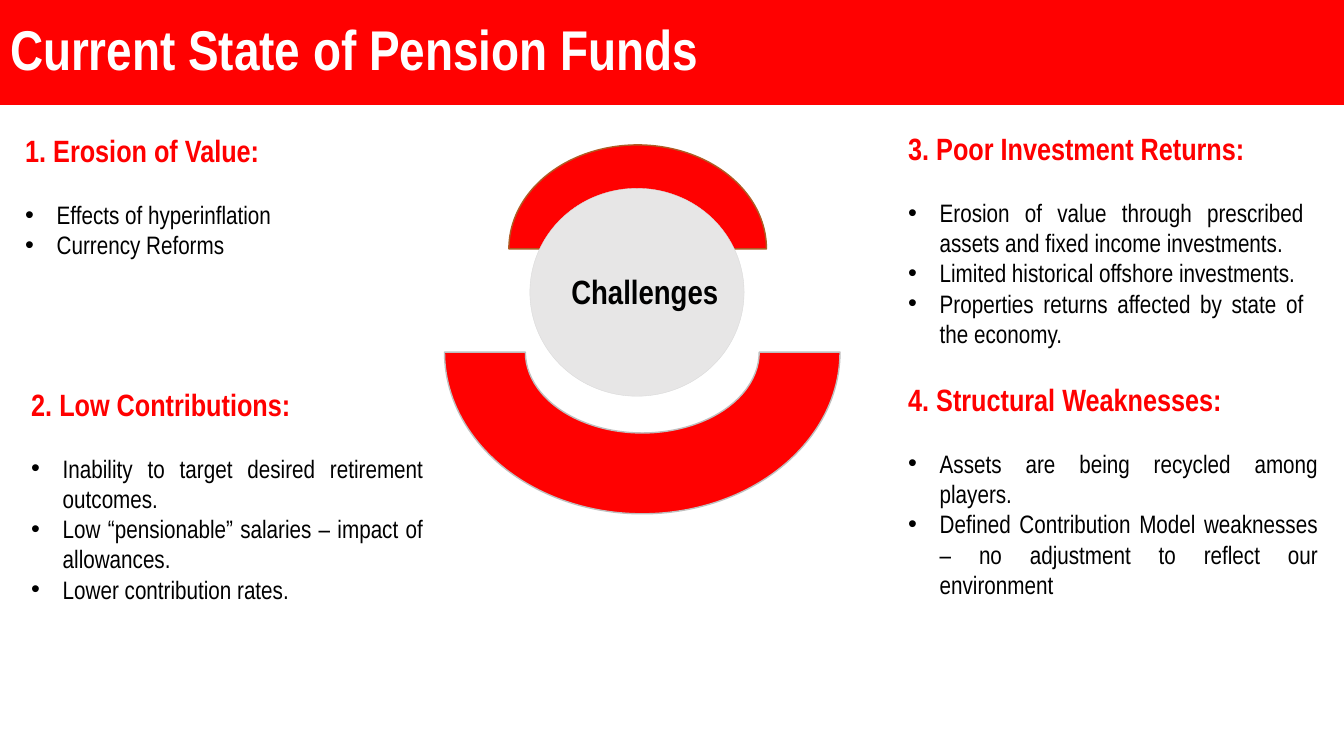
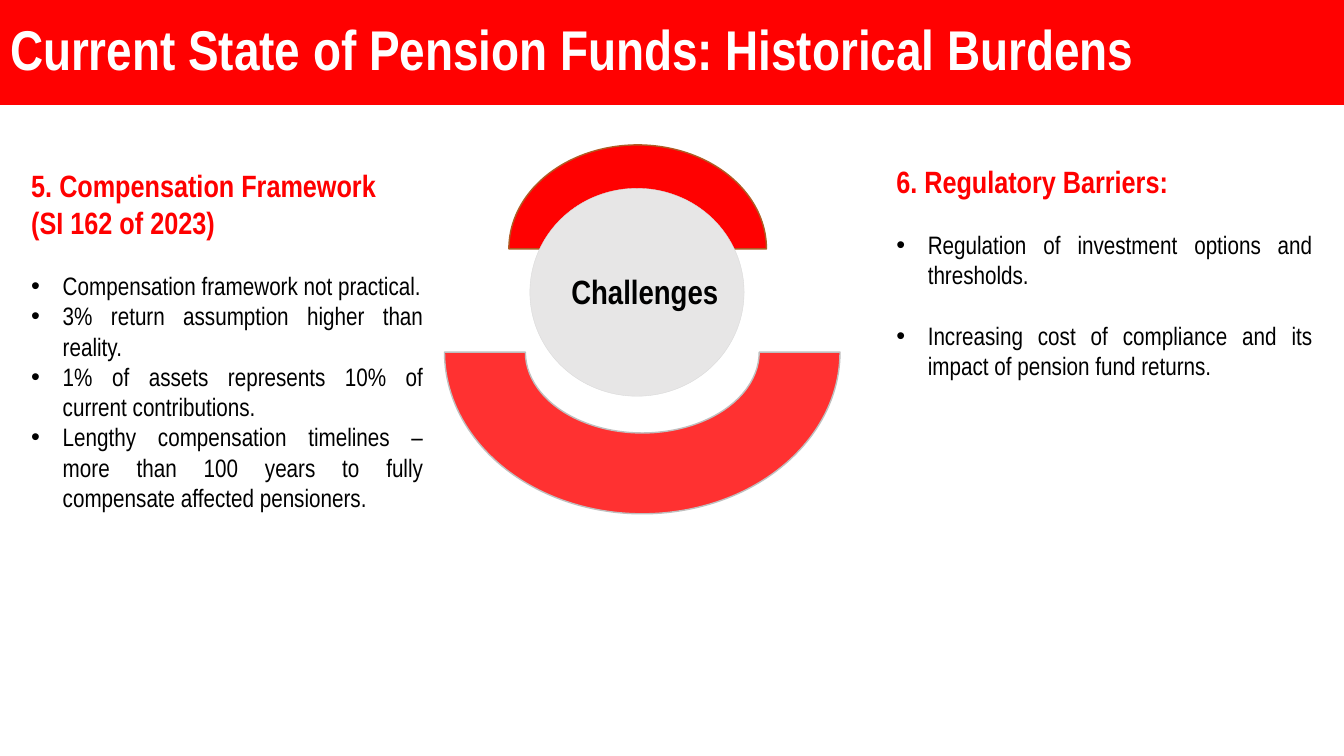
from lxml import etree
from pptx import Presentation
from pptx import util as u
from pptx.dml import color
from pptx.enum import shapes, text
from pptx.oxml import ns

RED, ARC_RED, PALE_RED = "FF0000", "FF0101", "FF3131"
BLACK, WHITE = "000000", "FFFFFF"
DISC_GREY, DISC_EDGE, ARC_EDGE, BROWN = "E7E6E6", "D9D9D9", "BFBFBF", "AF5C24"
FONT = "Arial Narrow"
TITLE_FMT = {"size": u.Pt(40), "bold": True, "name": FONT}
HEAD_FMT = {"size": u.Pt(22), "bold": True, "name": FONT}
HUB_FMT = {"size": u.Pt(24), "bold": True, "name": FONT}
ITEM_FMT = {"size": u.Pt(18), "bold": False, "name": FONT}
INDENT = 22.5
LINE = 21.6  # height of one line of list text
COMPARISON, TWO_CONTENT = 4, 3  # layouts with four and two body placeholders


def rgb(value):
    return color.RGBColor.from_string(value)


def place(sp, box):
    for name, value in zip(("left", "top", "width", "height"), box):
        setattr(sp, name, u.Pt(value))


def add_run(p, words, fmt, ink):
    r = p.add_run()
    r.text = words
    for name, value in fmt.items():
        setattr(r.font, name, value)
    r.font.color.rgb = rgb(ink)


def set_bullet(p, on):
    """Give the paragraph a hanging bullet, or none."""
    pPr = p._p.get_or_add_pPr()
    pPr.set("marL", str(u.Pt(INDENT if on else 0)))
    pPr.set("indent", str(u.Pt(-INDENT if on else 0)))
    if on:
        etree.SubElement(pPr, ns.qn("a:buFont")).set("typeface", "Arial")
        etree.SubElement(pPr, ns.qn("a:buChar")).set("char", "•")
    else:
        etree.SubElement(pPr, ns.qn("a:buNone"))


def title_band(sp, words):
    place(sp, (0, 0, 960, 75))
    sp.fill.solid()
    sp.fill.fore_color.rgb = rgb(ARC_RED)
    tf = sp.text_frame
    tf.auto_size = text.MSO_AUTO_SIZE.NONE
    tf.vertical_anchor = text.MSO_ANCHOR.MIDDLE
    p = tf.paragraphs[0]
    p.alignment = text.PP_ALIGN.LEFT
    p.line_spacing = 0.9
    add_run(p, words, TITLE_FMT, WHITE)


def section(sp, box, heads, items, gap=0):
    """Red heading lines, then a justified bullet list."""
    place(sp, box)
    tf = sp.text_frame
    tf.auto_size = text.MSO_AUTO_SIZE.NONE
    tf.vertical_anchor = text.MSO_ANCHOR.TOP
    rows = [(h, False, 0) for h in heads]
    rows += [(t, True, gap if i else LINE) for i, t in enumerate(items)]
    for i, (words, is_item, before) in enumerate(rows):
        p = tf.add_paragraph() if i else tf.paragraphs[0]
        set_bullet(p, is_item)
        p.alignment = text.PP_ALIGN.JUSTIFY
        p.space_before = u.Pt(before)
        add_run(p, words, *((ITEM_FMT, BLACK) if is_item else (HEAD_FMT, RED)))


def add_part(parent, kind, box, fill, edge, weight):
    sp = parent.add_shape(kind, *map(u.Pt, box))
    sp.shadow.inherit = False
    sp.fill.solid()
    sp.fill.fore_color.rgb = rgb(fill)
    sp.line.color.rgb = rgb(edge)
    sp.line.width = u.Pt(weight)
    return sp


def challenges_hub(s, x, y, lower_fill):
    """Disc between two arcs, with its top left corner at x, y."""
    arc = shapes.MSO_SHAPE.BLOCK_ARC
    disc = shapes.MSO_SHAPE.FLOWCHART_CONNECTOR
    top = s.shapes.add_group_shape().shapes
    add_part(top, arc, (x + 46, y, 184, 148.5), ARC_RED, BROWN, 1)
    add_part(top, disc, (x + 61, y + 31, 153, 148.5), DISC_GREY, DISC_EDGE, 0.25)
    lower = add_part(s.shapes, arc, (x, y + 32.5, 282.5, 231), lower_fill, ARC_EDGE, 1)
    lower.rotation = 180
    # Label
    tf = s.shapes.add_textbox(*map(u.Pt, (x + 83.5, y + 86.5, 130, 36))).text_frame
    tf.word_wrap = True
    add_run(tf.paragraphs[0], "Challenges", HUB_FMT, BLACK)


def challenge_slide(prs, layout, title, lower_fill, sections):
    s = prs.slides.add_slide(prs.slide_layouts[layout])
    title_band(s.shapes.title, title)
    bodies = [sp for sp in s.placeholders if sp.placeholder_format.idx]
    for sp, parts in zip(bodies, sections):
        section(sp, *parts)
    challenges_hub(s, 317.5, 103.5, lower_fill)


def main():
    prs = Presentation()
    prs.slide_width, prs.slide_height = u.Pt(960), u.Pt(540)

    challenge_slide(prs, COMPARISON, "Current State of Pension Funds", ARC_RED, [
        ((10.8, 90.7, 225.5, 121), ["1. Erosion of Value:"],
         ["Effects of hyperinflation", "Currency Reforms"]),
        ((15.1, 272, 294.5, 165), ["2. Low Contributions:"],
         ["Inability to target desired retirement outcomes.",
          "Low “pensionable” salaries – impact of allowances.",
          "Lower contribution rates."]),
        ((641.5, 89.3, 297, 165), ["3. Poor Investment Returns:"],
         ["Erosion of value through prescribed assets and fixed income investments.",
          "Limited historical offshore investments.",
          "Properties returns affected by state of the economy."]),
        ((641.5, 268.5, 307.2, 165), ["4. Structural Weaknesses:"],
         ["Assets are being recycled among players.",
          "Defined Contribution Model weaknesses – no adjustment to reflect our environment"]),
    ])

    challenge_slide(prs, TWO_CONTENT, "Current State of Pension Funds: Historical Burdens",
                    PALE_RED, [
        ((15.1, 115.2, 294.5, 257), ["5. Compensation Framework", "(SI 162 of 2023)"],
         ["Compensation framework not practical.",
          "3% return assumption higher than reality.",
          "1% of assets represents 10% of current contributions.",
          "Lengthy compensation timelines – more than 100 years to fully "
          "compensate affected pensioners."]),
        ((633, 112.3, 311.8, 165), ["6. Regulatory Barriers:"],
         ["Regulation of investment options and thresholds.",
          "Increasing cost of compliance and its impact of pension fund returns."], LINE),
    ])

    prs.save("out.pptx")


if __name__ == "__main__":
    main()
